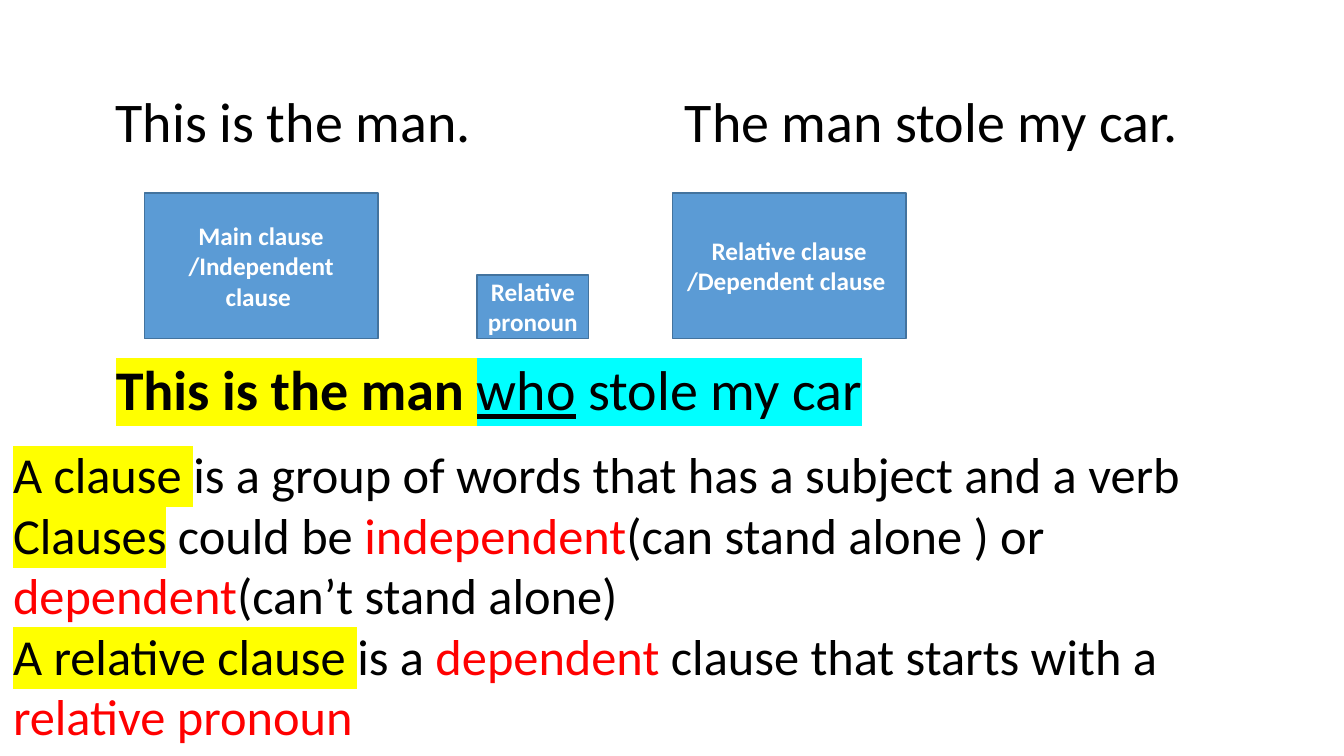
from lxml import etree
from pptx import Presentation
from pptx.dml.color import RGBColor
from pptx.enum.shapes import MSO_SHAPE as Shape
from pptx.enum.text import MSO_ANCHOR as Anchor, PP_ALIGN as Align
from pptx.oxml.ns import qn
from pptx.util import Pt

FONT = "Calibri"
BLACK, WHITE, RED = "000000", "FFFFFF", "FF0000"
YELLOW, CYAN = "FFFF00", "00FFFF"
BLUE, EDGE = "5B9BD5", "43739E"

CLAUSES = [
    [("A clause ", {"mark": YELLOW}),
     ("is a group of words that has a subject and a verb", {})],
    [("Clauses", {"mark": YELLOW}), (" could be ", {}),
     ("independent", {"hue": RED}), ("(can stand alone ) or ", {}),
     ("dependent", {"hue": RED}), ("(can’t stand alone)", {})],
    [("A relative clause ", {"mark": YELLOW}), ("is a ", {}),
     ("dependent", {"hue": RED}), (" clause that starts with a ", {}),
     ("relative pronoun", {"hue": RED})],
]
JOINED = [[("This is the man ", {"mark": YELLOW, "bold": True}),
           ("who", {"mark": CYAN, "line": True}),
           (" stole my car", {"mark": CYAN})]]


def color(code):
    return RGBColor.from_string(code)


def style(run, size, hue=BLACK, mark=None, bold=False, line=False):
    font = run.font
    font.size, font.bold, font.underline = Pt(size), bold, line
    font.color.rgb = color(hue)
    if mark:
        # The schema wants the highlight after the fill and before the font.
        light = etree.SubElement(font._element, qn("a:highlight"))
        etree.SubElement(light, qn("a:srgbClr")).set("val", mark)
    font.name = FONT


def add_text(slide, box, lines, size):
    """Fill a text box with paragraphs, each a list of (text, format) parts."""
    frame = slide.shapes.add_textbox(*map(Pt, box)).text_frame
    frame.word_wrap = True
    for i, parts in enumerate(lines):
        para = frame.add_paragraph() if i else frame.paragraphs[0]
        for text, look in parts:
            run = para.add_run()
            run.text = text
            style(run, size, **look)


def add_label(slide, box, text):
    label = slide.shapes.add_shape(Shape.RECTANGLE, *map(Pt, box))
    label.shadow.inherit = False
    label.fill.solid()
    label.fill.fore_color.rgb = color(BLUE)
    label.line.color.rgb = color(EDGE)
    label.line.width = Pt(1)
    frame = label.text_frame
    frame.word_wrap = True
    frame.vertical_anchor = Anchor.MIDDLE
    para = frame.paragraphs[0]
    para.text = text
    para.alignment = Align.CENTER
    style(para.runs[0], 18, WHITE, bold=True)


def add_example(slide, left, top, width):
    """Place two sentences, the labels of their parts, and the joined one."""
    add_text(slide, (left, top, 380, 56), [[("This is the man.", {})]], 40)
    add_text(slide, (left + 406.5, top, width - 406.5, 56),
             [[("The man stole my car.", {})]], 40)
    wide, tall = 167, 104
    base = top + 183.5
    add_label(slide, (left + 27.4, base - tall, wide, tall),
              "Main clause /Independent clause ")
    add_label(slide, (left + 404.6, base - tall, wide, tall),
              "Relative clause /Dependent clause ")
    add_label(slide, (left + 265, base - 45.5, 80, 45.5), "Relative pronoun")
    add_text(slide, (left, top + 191.7, width, 56), JOINED, 40)


def main():
    deck = Presentation()
    deck.slide_width, deck.slide_height = Pt(960), Pt(540)
    slide = deck.slides.add_slide(deck.slide_layouts[6])
    add_example(slide, 75.6, 58.3, 793)
    add_text(slide, (2.2, 313.2, 940, 225.4), CLAUSES, 36)
    deck.save("out.pptx")


if __name__ == "__main__":
    main()
